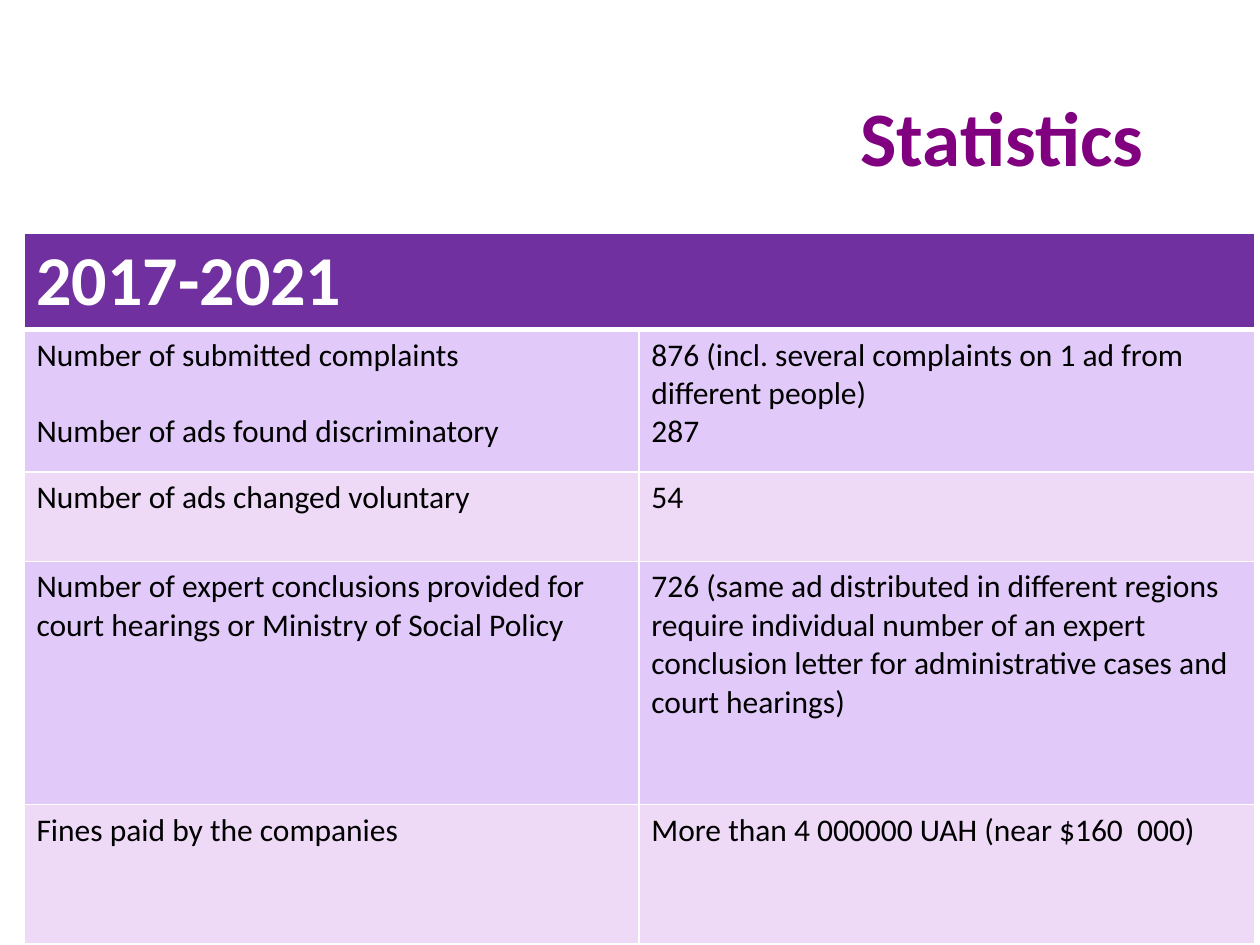
from lxml.etree import SubElement
from pptx import Presentation
from pptx.dml.color import RGBColor
from pptx.enum.text import MSO_ANCHOR, PP_ALIGN
from pptx.oxml.ns import qn
from pptx.util import Inches, Pt

WHITE = RGBColor(0xFF, 0xFF, 0xFF)
BLACK = RGBColor(0x00, 0x00, 0x00)
TITLE_PURPLE = RGBColor(0x80, 0x00, 0x80)
HEADER_PURPLE = RGBColor(0x70, 0x30, 0xA0)
LILAC = RGBColor(0xE1, 0xCA, 0xFA)
PINK = RGBColor(0xEE, 0xD9, 0xF7)

LEFT, TOP = 0.19, 1.85
COLUMNS = [4.88, 4.89]
ROWS = [0.76, 1.13, 0.71, 1.93, 1.1]


def write(frame, lines, size=18, color=BLACK, bold=False,
          align=PP_ALIGN.LEFT, spacing=1.0, gap=0):
    """Fill a text frame, one paragraph per line, with gap points between."""
    frame.word_wrap = True
    for index, line in enumerate(lines):
        paragraph = frame.add_paragraph() if index else frame.paragraphs[0]
        paragraph.alignment = align
        paragraph.line_spacing = spacing
        if index:
            paragraph.space_before = Pt(gap)
        run = paragraph.add_run()
        run.text = line
        run.font.name = "Calibri"
        run.font.size = Pt(size)
        run.font.bold = bold
        run.font.color.rgb = color


def paint(cell, color, bottom=1):
    """Give a cell white borders and a solid fill."""
    properties = cell._tc.get_or_add_tcPr()
    for side, width in (("L", 1), ("R", 1), ("T", 1), ("B", bottom)):
        line = SubElement(properties, qn(f"a:ln{side}"), w=str(Pt(width)))
        fill = SubElement(line, qn("a:solidFill"))
        SubElement(fill, qn("a:srgbClr"), val=str(WHITE))
    cell.fill.solid()
    cell.fill.fore_color.rgb = color


presentation = Presentation()
presentation.slide_width, presentation.slide_height = Inches(10), Inches(7.5)
slide = presentation.slides.add_slide(presentation.slide_layouts[6])

# Title
title = slide.shapes.add_textbox(Inches(0.69), Inches(0.4),
                                 Inches(8.62), Inches(1.45))
title.text_frame.vertical_anchor = MSO_ANCHOR.MIDDLE
write(title.text_frame, ["Statistics "], size=44, color=TITLE_PURPLE,
      bold=True, align=PP_ALIGN.RIGHT, spacing=0.9)

# Table grid
statistics = slide.shapes.add_table(
    len(ROWS), len(COLUMNS), Inches(LEFT), Inches(TOP),
    Inches(sum(COLUMNS)), Inches(sum(ROWS))).table
for column, width in zip(statistics.columns, COLUMNS):
    column.width = Inches(width)
for row, height in zip(statistics.rows, ROWS):
    row.height = Inches(height)

# Header across both columns
period = statistics.cell(0, 0)
period.merge(statistics.cell(0, 1))
for cell in statistics.rows[0].cells:
    paint(cell, HEADER_PURPLE, bottom=3)
write(period.text_frame, ["2017-2021"], size=40, color=WHITE, bold=True)

# Body: measures and figures, in alternating bands
records = [
    (["Number of submitted complaints",
      "Number of ads found discriminatory"],
     ["876 (incl. several complaints on 1 ad from different people)", "287"]),
    (["Number of ads changed voluntary"], ["54"]),
    (["Number of expert conclusions provided for court hearings "
      "or Ministry of Social Policy"],
     ["726 (same ad distributed in different regions require individual "
      "number of an expert conclusion letter for administrative cases "
      "and court hearings)"]),
    (["Fines paid by the companies"],
     ["More than 4 000000 UAH (near $160  000)"]),
]
for number, (measure, figure) in enumerate(records, start=1):
    band = LILAC if number % 2 else PINK
    # The measures sit one line apart to face their figures
    for column, (lines, gap) in enumerate(((measure, 22), (figure, 0))):
        cell = statistics.cell(number, column)
        paint(cell, band)
        write(cell.text_frame, lines, gap=gap)

presentation.save("out.pptx")
